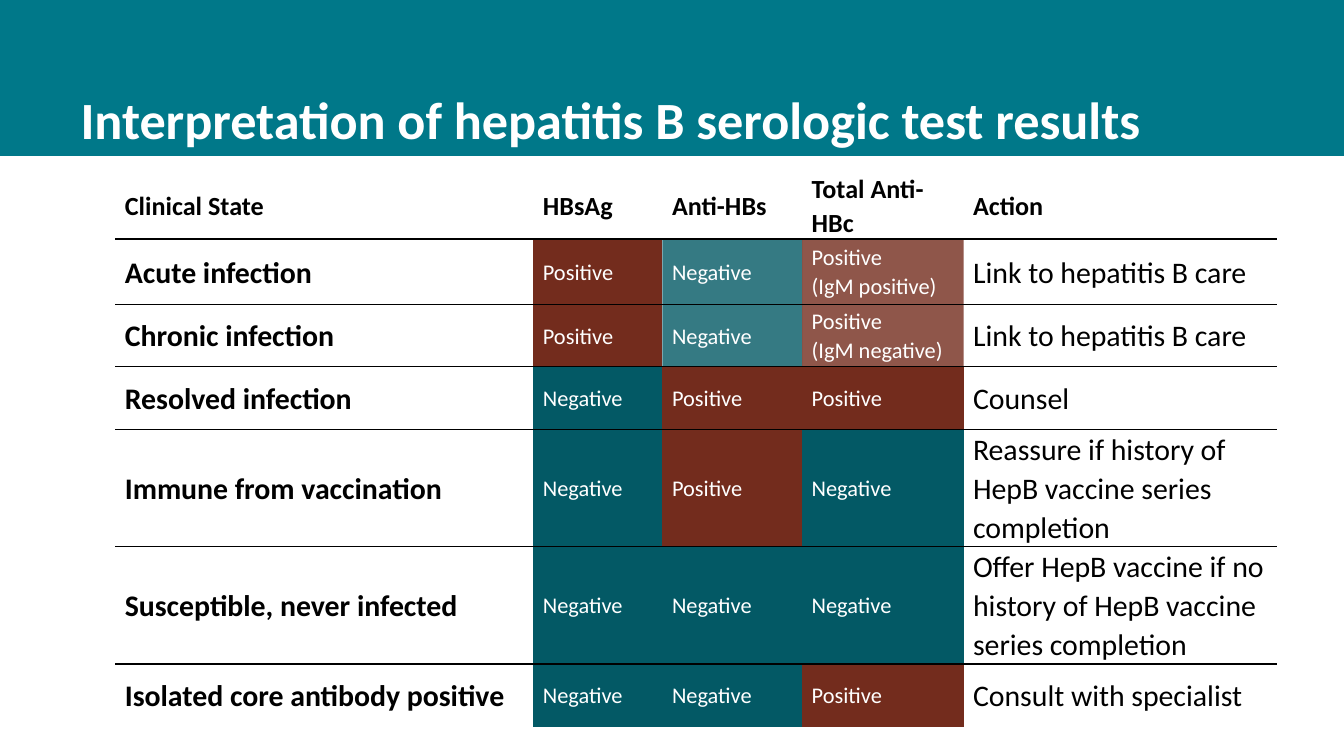
from lxml import etree
from pptx import Presentation
from pptx import util as u
from pptx.dml.color import RGBColor
from pptx.enum import shapes, text
from pptx.oxml import ns

BLACK = RGBColor(0x00, 0x00, 0x00)
WHITE = RGBColor(0xFF, 0xFF, 0xFF)
TEAL = RGBColor(0x00, 0x78, 0x89)
DARK_TEAL = RGBColor(0x03, 0x59, 0x65)
RUST = RGBColor(0x73, 0x2C, 0x1D)

PLAIN_TABLE = "{2D5ABB26-0587-4C30-8999-92F81FD0307C}"
COLUMNS = [7.9, 2.44, 2.64, 3.05, 5.92]
ROWS = [1.19, 1.24, 1.17, 1.19, 1.19, 1.19, 1.19]
RULES = [1, 0.5, 0.5, 0.5, 0.5, 1, 0]
HEADER = ["Clinical State", "HBsAg", "Anti-HBs", "Total Anti-HBc", "Action"]
STATES = [
    ["Acute infection", "Positive", "Negative", "Positive\n(IgM positive)",
     "Link to hepatitis B care"],
    ["Chronic infection", "Positive", "Negative", "Positive\n(IgM negative)",
     "Link to hepatitis B care"],
    ["Resolved infection", "Negative", "Positive", "Positive", "Counsel"],
    ["Immune from vaccination", "Negative", "Positive", "Negative",
     "Reassure if history of HepB vaccine series completion"],
    ["Susceptible, never infected", "Negative", "Negative", "Negative",
     "Offer HepB vaccine if no history of HepB vaccine series completion"],
    ["Isolated core antibody positive", "Negative", "Negative", "Positive",
     "Consult with specialist"],
]
FADED = {(row, col) for row in (1, 2) for col in (2, 3)}


def write(tf, content, font="Calibri", size=16, color=BLACK, bold=False, spacing=1.07):
    for i, line in enumerate(content.split("\n")):
        p = tf.paragraphs[0] if i == 0 else tf.add_paragraph()
        p.alignment = text.PP_ALIGN.LEFT
        p.line_spacing = spacing
        p.space_before = u.Pt(0)
        r = p.add_run()
        r.text = line
        r.font.name = font
        r.font.size = u.Pt(size)
        r.font.bold = bold
        r.font.color.rgb = color


class SlideBuilder:
    def __init__(self, slide, font="Calibri"):
        self.s = slide
        self.font = font

    def title(self, content, left, top, width, height):
        sp = self.s.shapes.title
        sp.left, sp.top, sp.width, sp.height = map(u.Cm, (left, top, width, height))
        tf = sp.text_frame
        tf.word_wrap = True
        tf.auto_size = text.MSO_AUTO_SIZE.NONE
        tf.vertical_anchor = text.MSO_ANCHOR.BOTTOM
        write(tf, content, font=self.font, size=28, color=WHITE, bold=True,
              spacing=u.Pt(30))

    def band(self, left, top, width, height, color):
        sp = self.s.shapes.add_shape(shapes.MSO_SHAPE.RECTANGLE,
                                     *map(u.Cm, (left, top, width, height)))
        sp.shadow.inherit = False
        sp.fill.solid()
        sp.fill.fore_color.rgb = color
        sp.line.fill.background()
        self.s.shapes.title.element.addprevious(sp.element)

    def table(self, left, top, columns, rows):
        frame = self.s.shapes.add_table(
            len(rows), len(columns),
            *map(u.Cm, (left, top, sum(columns), sum(rows))))
        table = frame.table
        table.first_row = table.horz_banding = False
        style = next(frame.element.iter(ns.qn("a:tableStyleId")))
        style.text = PLAIN_TABLE
        for column, width in zip(table.columns, columns):
            column.width = u.Cm(width)
        for row, height in zip(table.rows, rows):
            row.height = u.Cm(height)
        return table

    def cell(self, cell, content, fill=None, alpha=100, rule=0, **style):
        cell.margin_left = cell.margin_right = u.Cm(0.18)
        cell.margin_top = cell.margin_bottom = 0
        cell.vertical_anchor = text.MSO_ANCHOR.MIDDLE
        write(cell.text_frame, content, font=self.font, **style)
        if fill is None:
            cell.fill.background()
        else:
            cell.fill.solid()
            cell.fill.fore_color.rgb = fill
        tc_pr = cell._tc.get_or_add_tcPr()
        if alpha < 100:
            color = next(tc_pr.iter(ns.qn("a:srgbClr")))
            etree.SubElement(color, ns.qn("a:alpha"), val=str(alpha * 1000))
        if rule:
            line = etree.Element(ns.qn("a:lnB"), w=str(u.Pt(rule)))
            solid = etree.SubElement(line, ns.qn("a:solidFill"))
            etree.SubElement(solid, ns.qn("a:srgbClr"), val=str(BLACK))
            tc_pr.insert(0, line)


def main():
    prs = Presentation()
    prs.slide_width, prs.slide_height = u.Cm(25.4), u.Cm(14.29)
    builder = SlideBuilder(prs.slides.add_slide(prs.slide_layouts[5]))
    builder.band(0, 0, 25.4, 2.95, TEAL)
    builder.title("Interpretation of hepatitis B serologic test results",
                  1.27, 0.58, 22.86, 2.39)

    table = builder.table(2.18, 3.23, COLUMNS, ROWS)
    for row, values in enumerate([HEADER] + STATES):
        for col, value in enumerate(values):
            if row == 0:
                style = dict(size=14, bold=True)
            elif 1 <= col <= 3:
                style = dict(size=12, color=WHITE,
                             fill=RUST if value.startswith("Positive") else DARK_TEAL,
                             alpha=80 if (row, col) in FADED else 100)
            else:
                style = dict(size=16, bold=col == 0)
            builder.cell(table.cell(row, col), value, rule=RULES[row], **style)
    prs.save("out.pptx")


if __name__ == "__main__":
    main()
